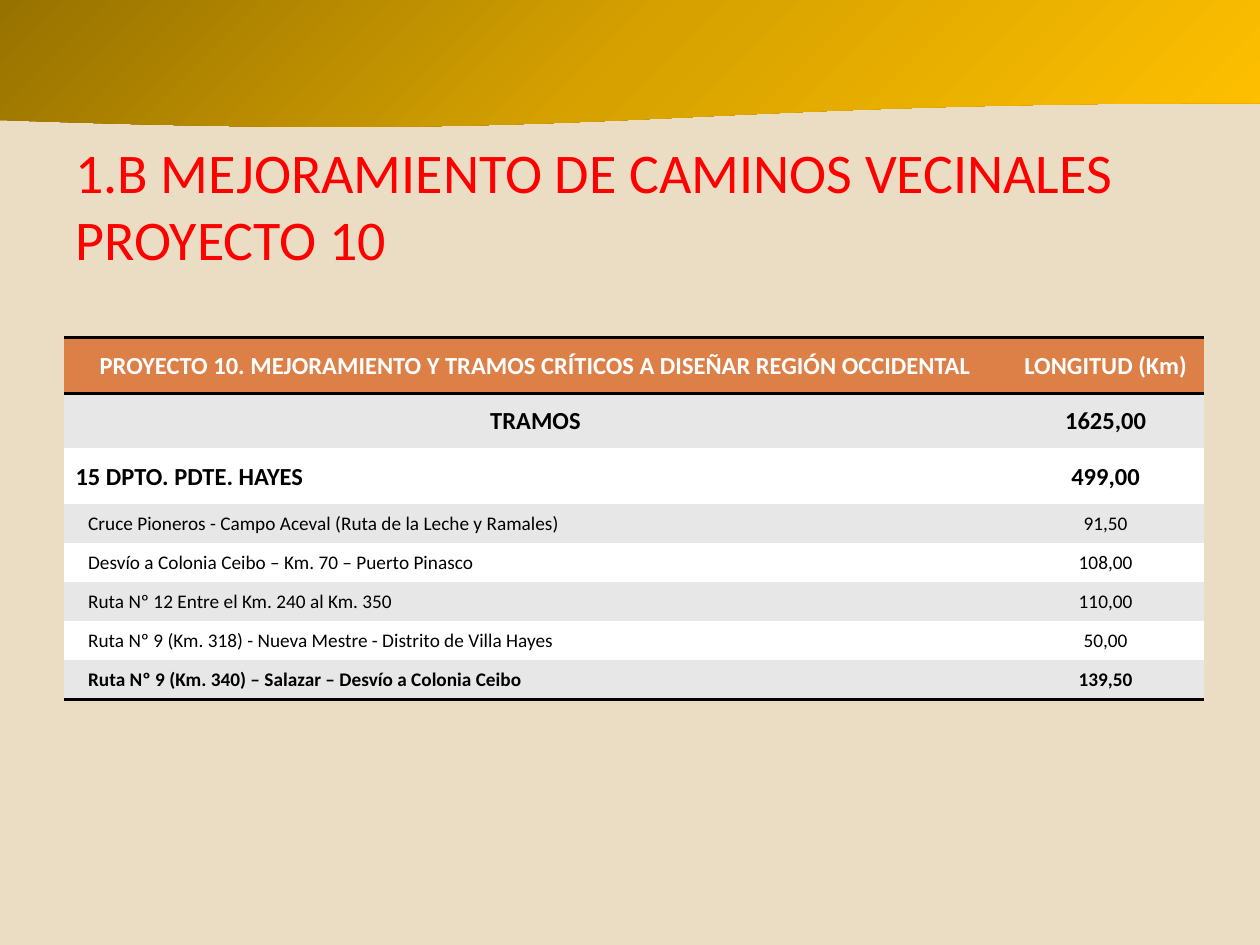
"""Build the slide listing the road sections of Proyecto 10."""
from copy import deepcopy
from dataclasses import dataclass

from lxml import etree
from pptx import Presentation, util as u
from pptx.dml.color import RGBColor as Rgb
from pptx.enum import shapes, text
from pptx.oxml.ns import qn


@dataclass(frozen=True)
class Theme:
    font: str = "Calibri"
    sand: str = "EBDDC3"
    wave: tuple = (("977200", 0), ("D7A200", 0.5), ("FFC000", 1))
    red: str = "FF0000"
    head: str = "DD8047"
    bands: tuple = ("FFFFFF", "E7E7E7")
    white: str = "FFFFFF"
    black: str = "000000"
    title: int = 32
    large: int = 14
    small: int = 11


theme = Theme()


def style(para, size, color, bold=False):
    para.font.name = theme.font
    para.font.size = u.Pt(size)
    para.font.bold = bold
    para.font.color.rgb = Rgb.from_string(color)


def rule(cell, side):
    line = etree.Element(qn(f"a:{side}"), w=str(u.Pt(2)))
    fill = etree.SubElement(line, qn("a:solidFill"))
    etree.SubElement(fill, qn("a:srgbClr"), val=theme.black)
    cell._tc.get_or_add_tcPr().insert(0, line)


deck = Presentation()
deck.slide_width, deck.slide_height = u.Inches(10), u.Inches(7.5)
slide = deck.slides.add_slide(deck.slide_layouts[6])
back = slide.background.fill
back.solid()
back.fore_color.rgb = Rgb.from_string(theme.sand)

wave = slide.shapes.add_shape(
    shapes.MSO_SHAPE.FLOWCHART_DOCUMENT, 0, 0, u.Inches(10), u.Inches(1.02))
wave.shadow.inherit = False
wave.line.fill.background()
wave.fill.gradient()
wave.fill.gradient_angle = 315
stops = wave.fill._fill._gradFill.find(qn("a:gsLst"))
stops.insert(1, deepcopy(stops[0]))
for stop, (color, place) in zip(wave.fill.gradient_stops, theme.wave):
    stop.color.rgb = Rgb.from_string(color)
    stop.position = place

title = slide.shapes.add_textbox(
    u.Inches(0.5), u.Inches(1), u.Inches(9), u.Inches(1.25))
frame = title.text_frame
frame.word_wrap = True
frame.vertical_anchor = text.MSO_ANCHOR.MIDDLE
para = frame.paragraphs[0]
para.text = "1.B MEJORAMIENTO DE CAMINOS VECINALES\vPROYECTO 10"
style(para, theme.title, theme.red)

roads = [
    ("PROYECTO 10. MEJORAMIENTO Y TRAMOS CRÍTICOS A DISEÑAR REGIÓN OCCIDENTAL",
     "LONGITUD (Km)"),
    ("TRAMOS", "1625,00"),
    ("15 DPTO. PDTE. HAYES", "499,00"),
    ("Cruce Pioneros - Campo Aceval (Ruta de la Leche y Ramales)", "91,50"),
    ("Desvío a Colonia Ceibo – Km. 70 – Puerto Pinasco", "108,00"),
    ("Ruta Nº 12 Entre el Km. 240 al Km. 350", "110,00"),
    ("Ruta Nº 9 (Km. 318) - Nueva Mestre - Distrito de Villa Hayes", "50,00"),
    ("Ruta Nº 9 (Km. 340) – Salazar – Desvío a Colonia Ceibo", "139,50"),
]
last = len(roads) - 1
table = slide.shapes.add_table(
    len(roads), 2, u.Inches(0.51), u.Inches(2.68),
    u.Inches(9.05), u.Inches(2.87)).table
table.first_row = table.horz_banding = False
for col, width in zip(table.columns, (7.48, 1.57)):
    col.width = u.Inches(width)

for row, road in enumerate(roads):
    large = row < 3
    table.rows[row].height = u.Inches(0.44 if large else 0.31)
    for col, words in enumerate(road):
        cell = table.cell(row, col)
        left = col == 0 and row > 1
        indent = (0.09 if large else 0.19) if left else 0.01
        cell.margin_left = u.Inches(indent)
        cell.margin_top = cell.margin_right = u.Inches(0.01)
        cell.margin_bottom = 0
        cell.vertical_anchor = text.MSO_ANCHOR.MIDDLE
        cell.fill.solid()
        cell.fill.fore_color.rgb = Rgb.from_string(
            theme.bands[row % 2] if row else theme.head)
        para = cell.text_frame.paragraphs[0]
        para.text = words
        para.alignment = text.PP_ALIGN.LEFT if left else text.PP_ALIGN.CENTER
        style(para, theme.large if large else theme.small,
              theme.black if row else theme.white, large or row == last)
        if row in (0, last):
            rule(cell, "lnB")
        if row == 0:
            rule(cell, "lnT")

plain = "{2D5ABB26-0587-4C30-8999-92F81FD0307C}"
table._tbl.tblPr.find(qn("a:tableStyleId")).text = plain

deck.save("out.pptx")
